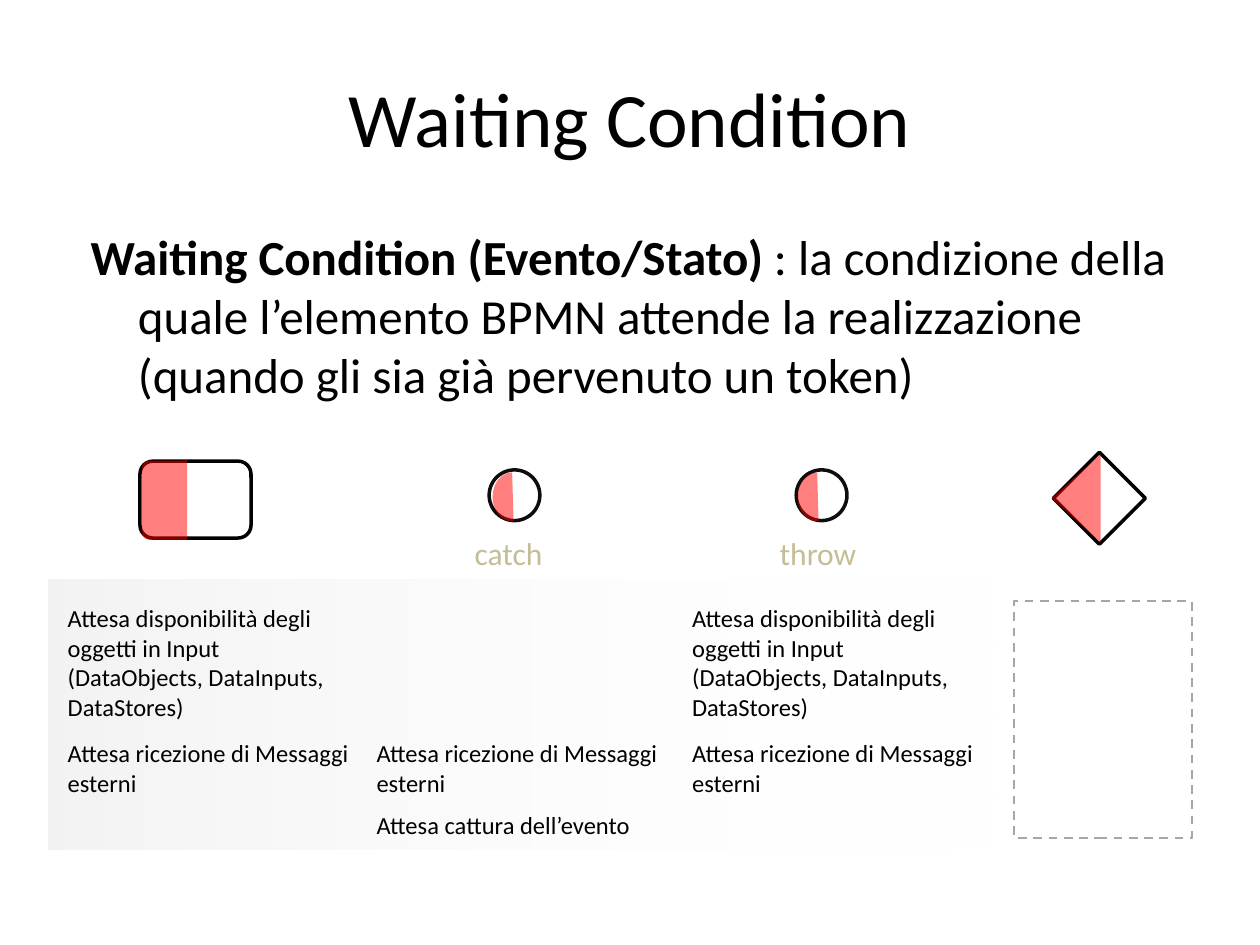
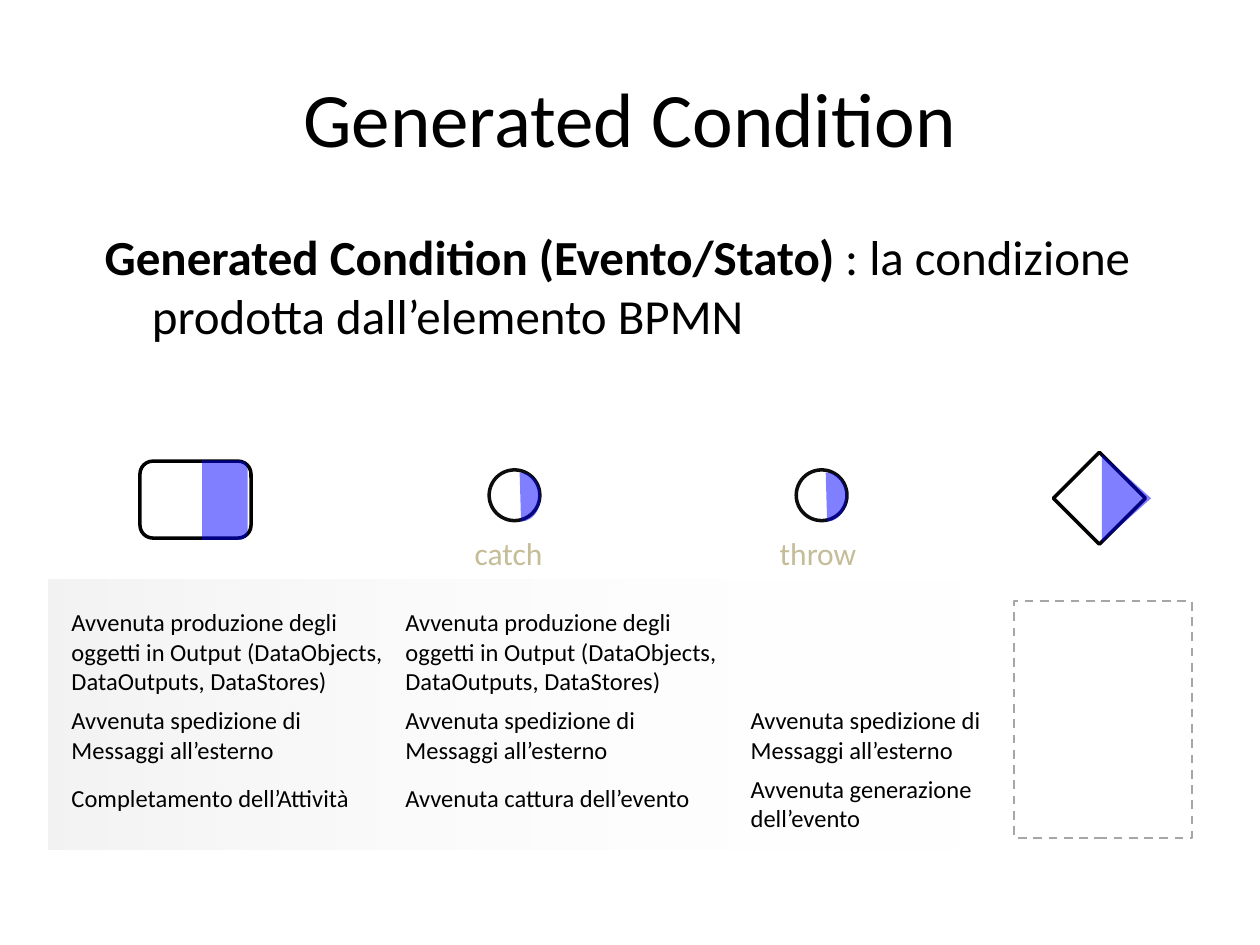
from lxml.etree import SubElement
from pptx import Presentation
from pptx.dml.color import RGBColor
from pptx.enum.dml import MSO_LINE
from pptx.enum.shapes import MSO_SHAPE as Kind
from pptx.enum.text import MSO_ANCHOR, MSO_AUTO_SIZE, PP_ALIGN
from pptx.oxml.ns import qn
from pptx.util import Pt

INK = {"black": "000000", "ring": "0D0D0D", "white": "FFFFFF", "tan": "C4BD97",
       "gray": "808080", "dash": "A6A6A6", "red": "FF0000", "blue": "0000FF"}
FONT = "Calibri"
TITLE = (36, 21.6, 648, 90)
ICONS = (80, 258.5, 574.5, 72)
PANEL = (28, 331.2, 551.5, 154)
FRAME = (579.6, 343.4, 101.5, 135.4)

INPUT = "Attesa disponibilità degli oggetti in Input (DataObjects, DataInputs, DataStores)"
WAIT = "Attesa ricezione di Messaggi esterni"
OUTPUT = "Avvenuta produzione degli oggetti in Output (DataObjects, DataOutputs, DataStores)"
SENT = "Avvenuta spedizione di Messaggi all’esterno"

PAGES = [
    {"title": "Waiting Condition", "box": (44.6, 126, 633.6, 110.2),
     "text": " : la condizione della quale l’elemento BPMN attende la realizzazione "
             "(quando gli sia già pervenuto un token)",
     "tint": "red", "turn": 0, "marks": (-8.7, 201.5, 375.8, 509.7),
     "notes": [(3.6, 179.3, [(10.1, INPUT), (87.1, WAIT)]),
               (180.1, 179.3, [(87.1, WAIT), (128.2, "Attesa cattura dell’evento")]),
               (360.4, 179.3, [(10.1, INPUT), (87.1, WAIT)])]},
    {"title": "Generated Condition", "box": (52.6, 126, 605.5, 82.1),
     "text": " : la condizione prodotta dall’elemento BPMN",
     "tint": "blue", "turn": 180, "marks": (25.8, 206.6, 381.5, 538.5),
     "notes": [(5.8, 196.6, [(12.2, OUTPUT), (68.4, SENT),
                             (113, "Completamento dell’Attività")]),
               (196.6, 196.6, [(12.2, OUTPUT), (68.4, SENT),
                               (113, "Avvenuta cattura dell’evento")]),
               (393.9, 146.2, [(68.4, SENT),
                               (107.3, "Avvenuta generazione dell’evento")])]},
]


def color(name):
    """Return the named colour."""
    return RGBColor.from_string(INK[name])


def fade(fill, *shares):
    """Set the opacity in percent of each colour of a fill, in order."""
    for node, share in zip(fill.iter(qn("a:srgbClr")), shares):
        SubElement(node, qn("a:alpha")).set("val", str(share * 1000))


def place(item, box):
    """Move and size an item."""
    item.left, item.top, item.width, item.height = map(Pt, box)


def write(para, text, size, ink="black", bold=False):
    """Add one run."""
    run = para.add_run()
    run.text = text
    font = run.font
    font.name, font.size, font.bold = FONT, Pt(size), bold
    font.color.rgb = color(ink)


def label(slide, box, text, size, ink="black"):
    """Add a wrapped text box."""
    item = slide.shapes.add_textbox(*map(Pt, box))
    item.text_frame.word_wrap = True
    write(item.text_frame.paragraphs[0], text, size, ink)


def draw(slide, kind, box, fill=None, line=None, width=2):
    """Add a preset shape without shadow."""
    item = slide.shapes.add_shape(kind, *map(Pt, box))
    item.shadow.inherit = False
    if fill:
        item.fill.solid()
        item.fill.fore_color.rgb = color(fill)
    else:
        item.fill.background()
    if line:
        item.line.color.rgb = color(line)
        item.line.width = Pt(width)
    else:
        item.line.fill.background()
    return item


def head(slide, page):
    """Fill the title and the definition."""
    title, body = slide.placeholders
    place(title, TITLE)
    title.text_frame.vertical_anchor = MSO_ANCHOR.MIDDLE
    para = title.text_frame.paragraphs[0]
    para.alignment = PP_ALIGN.CENTER
    write(para, page["title"], 44)
    place(body, page["box"])
    body.text_frame.auto_size = MSO_AUTO_SIZE.NONE
    para = body.text_frame.paragraphs[0]
    write(para, page["title"] + " (Evento/Stato)", 28, bold=True)
    write(para, page["text"], 28)
    SubElement(para._p.get_or_add_pPr(), qn("a:buNone"))


def icons(slide, box):
    """Draw the task, both events and the gateway."""
    x, y = box[:2]
    task = draw(slide, Kind.ROUNDED_RECTANGLE, (x, y + 5, 63.5, 44), "white", "black")
    task.adjustments[0] = 0.169
    for left, shift, wide, name in ((199.5, -15.3, 55.4, "catch"),
                                    (375, -16.5, 60.5, "throw")):
        draw(slide, Kind.OVAL, (x + left, y + 10, 29, 29), "white", "ring")
        label(slide, (x + left + shift, y + 43.2, wide, 28.8), name, 18, "tan")
    draw(slide, Kind.DIAMOND, (x + 522, y, 52.5, 52.5), "white", "black")


def tints(slide, box, page):
    """Shade one half of each icon."""
    x, y = box[:2]
    forms = ((Kind.ROUND_2_SAME_RECTANGLE, 14.4, 45.4, 25.9, 270),
             (Kind.CHORD, 11.5, 22.3, 28, 0),
             (Kind.CHORD, 11.5, 22.3, 28, 0),
             (Kind.ISOSCELES_TRIANGLE, 12.2, 50.4, 28.1, 270))
    for left, (kind, top, wide, high, angle) in zip(page["marks"], forms):
        mark = draw(slide, kind, (x + left, y + top, wide, high), page["tint"])
        mark.rotation = (angle + page["turn"]) % 360
        fade(mark._element.spPr, 50)
        if kind == Kind.CHORD:
            mark.adjustments[0], mark.adjustments[1] = 51.99, 162


def panel(slide, box, notes):
    """Draw the shaded panel with its columns of notes."""
    back = draw(slide, Kind.RECTANGLE, box)
    back.fill.gradient()
    back.fill.gradient_angle = 0
    for stop, name, spot in zip(back.fill.gradient_stops, ("gray", "white"), (0, 1)):
        stop.color.rgb, stop.position = color(name), spot
    fade(back._element.spPr, 10, 0)
    for left, wide, rows in notes:
        for top, text in rows:
            label(slide, (box[0] + left, box[1] + top, wide, 36), text, 14)


def frame(slide, box):
    """Draw the empty dashed frame."""
    item = draw(slide, Kind.RECTANGLE, box, line="dash", width=1.25)
    item.line.dash_style = MSO_LINE.DASH


def main():
    """Build both slides."""
    deck = Presentation()
    deck.slide_width, deck.slide_height = Pt(720), Pt(540)
    for page in PAGES:
        slide = deck.slides.add_slide(deck.slide_layouts[1])
        head(slide, page)
        panel(slide, PANEL, page["notes"])
        icons(slide, ICONS)
        frame(slide, FRAME)
        tints(slide, ICONS, page)
    deck.save("out.pptx")


if __name__ == "__main__":
    main()
